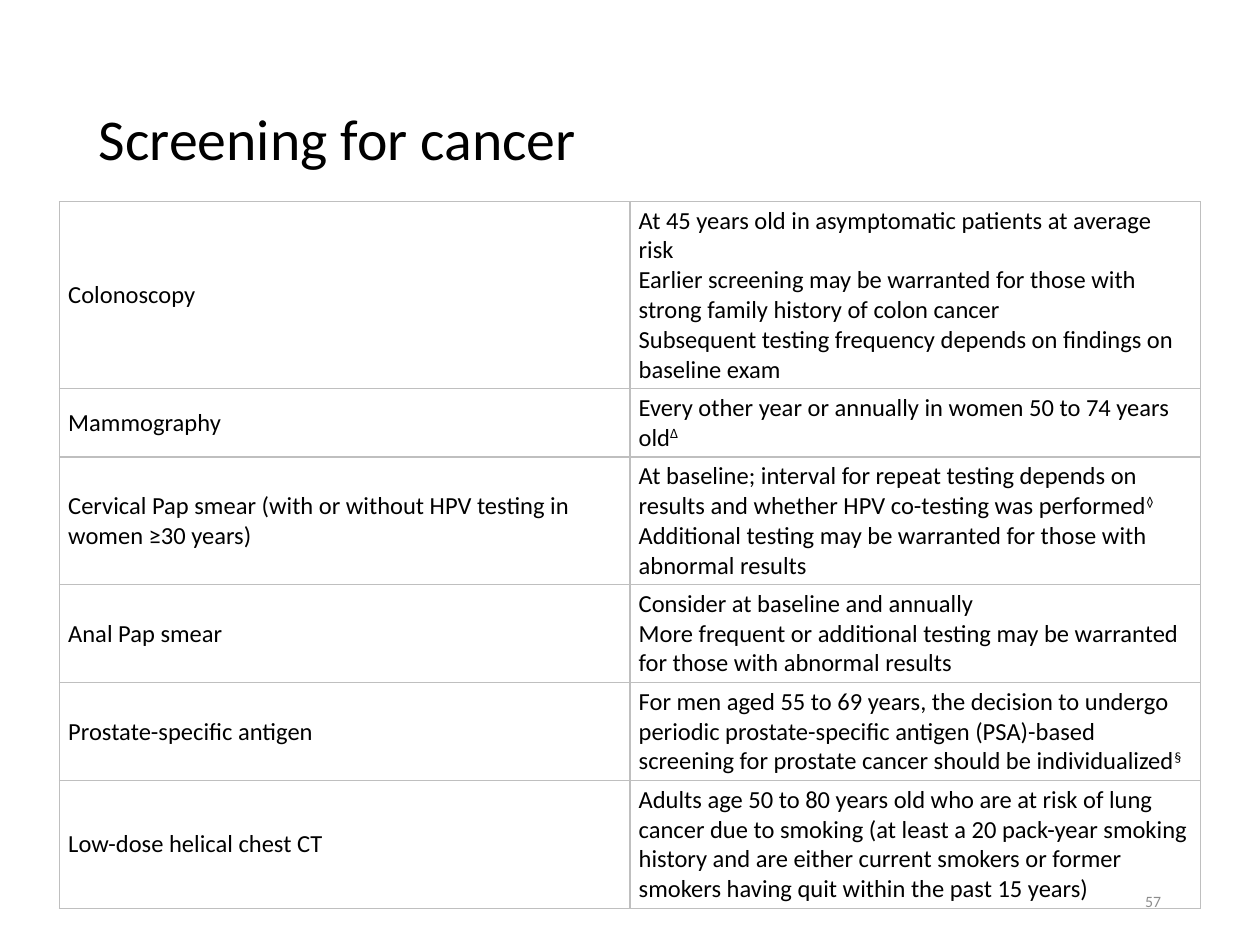
from dataclasses import dataclass

from lxml import etree
from pptx import Presentation
from pptx.dml.color import RGBColor
from pptx.enum.text import MSO_ANCHOR, PP_ALIGN
from pptx.oxml.ns import qn
from pptx.util import Pt

MIDDLE = MSO_ANCHOR.MIDDLE
LEFT, RIGHT = PP_ALIGN.LEFT, PP_ALIGN.RIGHT
BLANK_LAYOUT = 6


@dataclass(frozen=True)
class Theme:
    font: str = "Calibri"
    text: str = "000000"
    muted: str = "8C8C8C"
    background: str = "FFFFFF"
    border: str = "BFBFBF"
    title_size: float = 33
    table_size: float = 14
    number_size: float = 9
    border_width: float = 0.75


@dataclass(frozen=True)
class Box:
    left: float
    top: float
    width: float
    height: float

    def lengths(self):
        return Pt(self.left), Pt(self.top), Pt(self.width), Pt(self.height)


@dataclass(frozen=True)
class Paragraph:
    text: str
    mark: str = ""


@dataclass(frozen=True)
class Screening:
    test: str
    advice: tuple[Paragraph, ...]
    lines: int


THEME = Theme()
TITLE_BOX = Box(49.5, 28.8, 621, 104.4)
NUMBER_BOX = Box(508.5, 500.4, 162, 28.8)
TABLE_LEFT, TABLE_TOP, COLUMN_WIDTH = 34, 115.2, 326
LINE_HEIGHT, ROW_PADDING = 17, 5
CELL_FORMAT = {
    "vertical_anchor": MIDDLE,
    "margin_left": Pt(5), "margin_right": Pt(5),
    "margin_top": Pt(2.4), "margin_bottom": Pt(2.4),
}

SCREENINGS = (
    Screening("Colonoscopy", (
        Paragraph("At 45 years old in asymptomatic patients at average risk"),
        Paragraph("Earlier screening may be warranted for those with strong "
                  "family history of colon cancer"),
        Paragraph("Subsequent testing frequency depends on findings on baseline exam"),
    ), 6),
    Screening("Mammography", (
        Paragraph("Every other year or annually in women 50 to 74 years old", "Δ"),
    ), 2),
    Screening("Cervical Pap smear (with or without HPV testing in women ≥30 years)", (
        Paragraph("At baseline; interval for repeat testing depends on results "
                  "and whether HPV co-testing was performed", "◊"),
        Paragraph("Additional testing may be warranted for those with abnormal results"),
    ), 4),
    Screening("Anal Pap smear", (
        Paragraph("Consider at baseline and annually"),
        Paragraph("More frequent or additional testing may be warranted for "
                  "those with abnormal results"),
    ), 3),
    Screening("Prostate-specific antigen", (
        Paragraph("For men aged 55 to 69 years, the decision to undergo periodic "
                  "prostate-specific antigen (PSA)-based screening for prostate "
                  "cancer should be individualized", "§"),
    ), 3),
    Screening("Low-dose helical chest CT", (
        Paragraph("Adults age 50 to 80 years old who are at risk of lung cancer "
                  "due to smoking (at least a 20 pack-year smoking history and "
                  "are either current smokers or former smokers having quit "
                  "within the past 15 years)"),
    ), 4),
)


def add_run(paragraph, text: str, size: float, color: str):
    run = paragraph.add_run()
    run.text = text
    for name, value in {"name": THEME.font, "size": Pt(size)}.items():
        setattr(run.font, name, value)
    run.font.color.rgb = RGBColor.from_string(color)
    return run


def add_label(slide, box: Box, text: str, size: float, color: str,
              alignment=LEFT, line_spacing: float = 1.0) -> None:
    frame = slide.shapes.add_textbox(*box.lengths()).text_frame
    frame.word_wrap = True
    frame.vertical_anchor = MIDDLE
    paragraph = frame.paragraphs[0]
    paragraph.alignment = alignment
    paragraph.line_spacing = line_spacing
    add_run(paragraph, text, size, color)


def add_borders(cell) -> None:
    properties = cell._tc.get_or_add_tcPr()
    for side in ("a:lnL", "a:lnR", "a:lnT", "a:lnB"):
        line = etree.SubElement(properties, qn(side), w=str(Pt(THEME.border_width)))
        fill = etree.SubElement(line, qn("a:solidFill"))
        etree.SubElement(fill, qn("a:srgbClr"), val=THEME.border)


def fill_cell(cell, paragraphs: tuple[Paragraph, ...]) -> None:
    for name, value in CELL_FORMAT.items():
        setattr(cell, name, value)
    add_borders(cell)
    cell.fill.solid()
    cell.fill.fore_color.rgb = RGBColor.from_string(THEME.background)
    frame = cell.text_frame
    for index, content in enumerate(paragraphs):
        paragraph = frame.add_paragraph() if index else frame.paragraphs[0]
        add_run(paragraph, content.text, THEME.table_size, THEME.text)
        if content.mark:
            mark = add_run(paragraph, content.mark, THEME.table_size, THEME.text)
            mark._r.get_or_add_rPr().set("baseline", "30000")


def add_screening_table(slide) -> None:
    heights = [LINE_HEIGHT * item.lines + ROW_PADDING for item in SCREENINGS]
    box = Box(TABLE_LEFT, TABLE_TOP, 2 * COLUMN_WIDTH, sum(heights))
    table = slide.shapes.add_table(len(SCREENINGS), 2, *box.lengths()).table
    table.first_row = table.horz_banding = False
    for row, height, item in zip(table.rows, heights, SCREENINGS):
        row.height = Pt(height)
        fill_cell(row.cells[0], (Paragraph(item.test),))
        fill_cell(row.cells[1], item.advice)


def main() -> None:
    presentation = Presentation()
    presentation.slide_width, presentation.slide_height = Pt(720), Pt(540)
    slide = presentation.slides.add_slide(presentation.slide_layouts[BLANK_LAYOUT])
    add_label(slide, TITLE_BOX, "Screening for cancer", THEME.title_size,
              THEME.text, line_spacing=0.9)
    add_screening_table(slide)
    add_label(slide, NUMBER_BOX, "57", THEME.number_size, THEME.muted, RIGHT)
    presentation.save("out.pptx")


if __name__ == "__main__":
    main()
